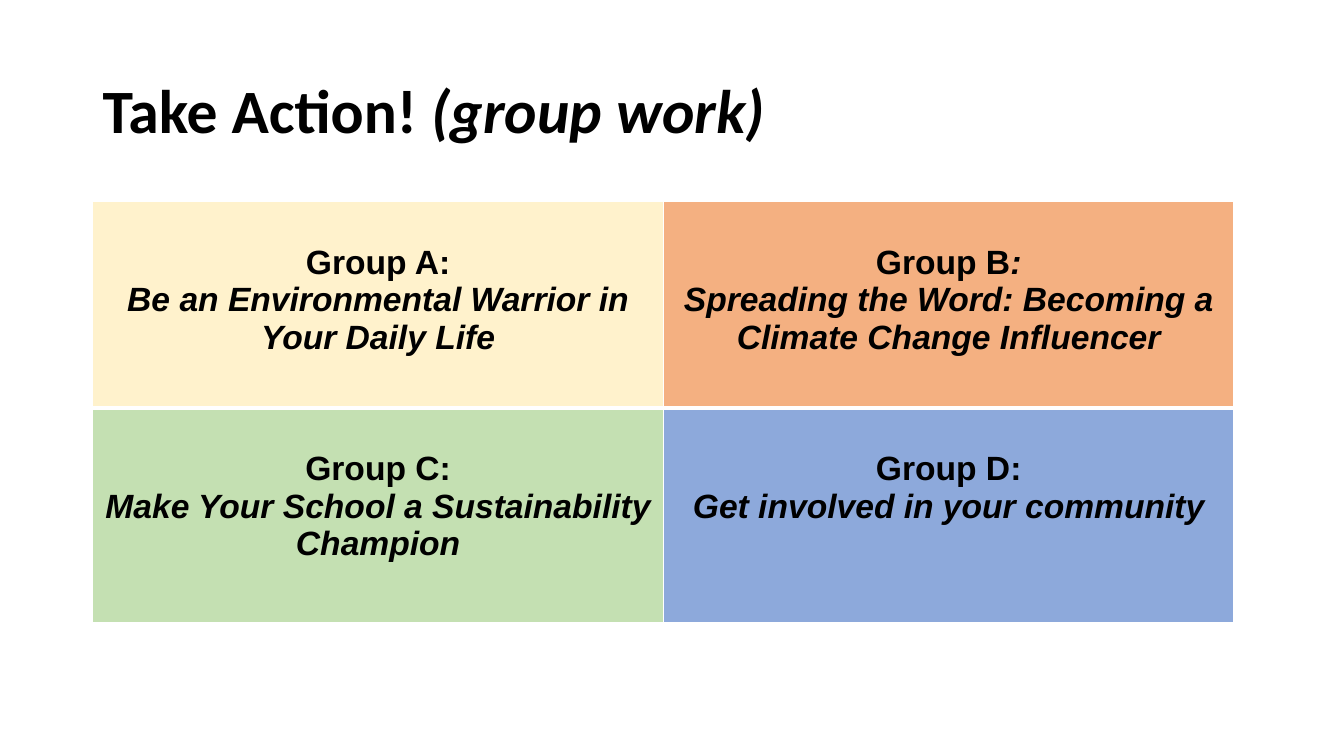
from dataclasses import dataclass

from lxml import etree
from pptx import Presentation
from pptx.dml.color import RGBColor
from pptx.enum.text import MSO_ANCHOR, PP_ALIGN
from pptx.oxml.ns import qn
from pptx.table import _Cell
from pptx.util import Inches, Pt

MIDDLE = MSO_ANCHOR.MIDDLE
CENTER = PP_ALIGN.CENTER

COLORS = {
    "text": "000000",
    "border": "FFFFFF",
    "cream": "FFF2CC",
    "orange": "F4B081",
    "green": "C4E0B2",
    "blue": "8DA9DB",
}
COLUMN_WIDTH = 5.66
ROW_HEIGHTS = (2.05, 2.13)
THIN, THICK = 1, 3


@dataclass(frozen=True)
class Group:
    letter: str
    task: str
    color: str
    italic_colon: bool = False


GROUPS = (
    Group("A", "Be an Environmental Warrior in Your Daily Life", "cream"),
    Group("B", "Spreading the Word: Becoming a Climate Change Influencer", "orange", True),
    Group("C", "Make Your School a Sustainability Champion", "green"),
    Group("D", "Get involved in your community", "blue"),
)


def add_run(paragraph, text: str, *, font: str, size: int, italic: bool = False) -> None:
    run = paragraph.add_run()
    run.text = text
    run.font.name = font
    run.font.size = Pt(size)
    run.font.bold = True
    run.font.italic = italic
    run.font.color.rgb = RGBColor.from_string(COLORS["text"])


def add_title(slide) -> None:
    shape = slide.shapes.add_textbox(Inches(0.92), Inches(0.4), Inches(11.5), Inches(1.45))
    frame = shape.text_frame
    frame.word_wrap = True
    frame.vertical_anchor = MIDDLE
    paragraph = frame.paragraphs[0]
    paragraph.line_spacing = 0.9
    add_run(paragraph, "Take Action! ", font="Calibri", size=44)
    add_run(paragraph, "(group work)", font="Calibri", size=44, italic=True)


def set_borders(cell: _Cell, widths: dict[str, int]) -> None:
    """Draw solid borders; widths maps the sides L, R, T, B to points."""
    properties = cell._tc.get_or_add_tcPr()
    for side, width in widths.items():
        line = etree.SubElement(properties, qn(f"a:ln{side}"), w=str(Pt(width)))
        fill = etree.SubElement(line, qn("a:solidFill"))
        etree.SubElement(fill, qn("a:srgbClr"), val=COLORS["border"])


def fill_cell(cell: _Cell, group: Group, row: int) -> None:
    top, bottom = (THIN, THICK) if row == 0 else (THICK, THIN)
    set_borders(cell, {"L": THIN, "R": THIN, "T": top, "B": bottom})
    cell.fill.solid()
    cell.fill.fore_color.rgb = RGBColor.from_string(COLORS[group.color])
    cell.margin_top = Inches(0.42)

    heading = cell.text_frame.paragraphs[0]
    task = cell.text_frame.add_paragraph()
    heading.alignment = task.alignment = CENTER
    add_run(heading, f"Group {group.letter}", font="Arial", size=24)
    add_run(heading, ":", font="Arial", size=24, italic=group.italic_colon)
    add_run(task, group.task, font="Arial", size=24, italic=True)


def add_group_table(slide) -> None:
    frame = slide.shapes.add_table(
        2, 2, Inches(0.92), Inches(2), Inches(2 * COLUMN_WIDTH), Inches(sum(ROW_HEIGHTS))
    )
    table = frame.table
    table.first_row = False
    table.horz_banding = False
    for column in table.columns:
        column.width = Inches(COLUMN_WIDTH)
    for row, height in zip(table.rows, ROW_HEIGHTS):
        row.height = Inches(height)
    for index, group in enumerate(GROUPS):
        row, column = divmod(index, 2)
        fill_cell(table.cell(row, column), group, row)


def main() -> None:
    presentation = Presentation()
    presentation.slide_width = Inches(13.33)
    presentation.slide_height = Inches(7.5)
    slide = presentation.slides.add_slide(presentation.slide_layouts[6])
    add_title(slide)
    add_group_table(slide)
    presentation.save("out.pptx")


if __name__ == "__main__":
    main()
